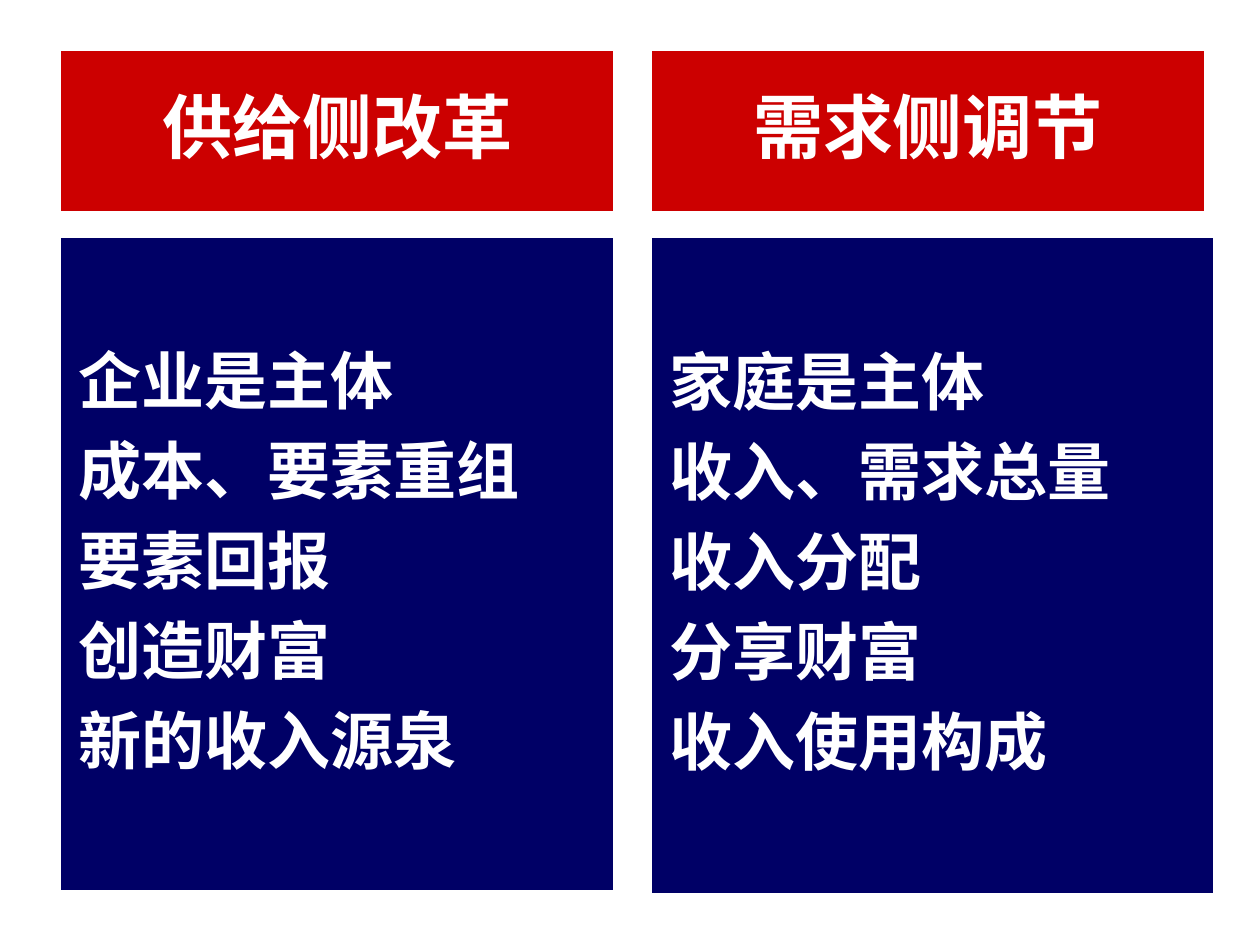
"""Build a two-column slide comparing supply-side reform and demand-side adjustment."""
from lxml import etree
from pptx import Presentation
from pptx.dml.color import RGBColor
from pptx.enum.shapes import MSO_SHAPE
from pptx.enum.text import MSO_ANCHOR, PP_ALIGN
from pptx.oxml.ns import qn
from pptx.util import Pt

RECT = MSO_SHAPE.RECTANGLE
MIDDLE = MSO_ANCHOR.MIDDLE
LEFT, CENTER = PP_ALIGN.LEFT, PP_ALIGN.CENTER
CJK_FONT = "Noto Sans CJK SC"


def rgb(value):
    return RGBColor.from_string(value)


def add_panel(s, box, lines, style):
    sp = s.shapes.add_shape(RECT, *[Pt(v) for v in box])
    sp.shadow.inherit = False
    sp.fill.solid()
    sp.fill.fore_color.rgb = rgb(style["fill"])
    sp.line.color.rgb = rgb("FFFFFF")
    sp.line.width = Pt(2)
    tf = sp.text_frame
    tf.word_wrap = True
    tf.vertical_anchor = MIDDLE
    for side in ("left", "top", "right", "bottom"):
        setattr(tf, f"margin_{side}", Pt(style["inset"]))
    for i, line in enumerate(lines):
        p = tf.add_paragraph() if i else tf.paragraphs[0]
        for name, value in {"alignment": style["align"], "line_spacing": 0.9,
                            "space_after": Pt(0)}.items():
            setattr(p, name, value)
        after = p._p.pPr.find(qn("a:spcAft"))
        after.remove(after[0])
        etree.SubElement(after, qn("a:spcPct"), val="35000")
        r = p.add_run()
        r.text = line
        for name, value in {"name": style["font"], "size": Pt(style["size"]),
                            "bold": True}.items():
            setattr(r.font, name, value)
        r.font.color.rgb = rgb("FFFFFF")
        etree.SubElement(r._r.rPr, qn("a:ea"), typeface=CJK_FONT)


prs = Presentation()
prs.slide_width, prs.slide_height = Pt(720), Pt(540)
s = prs.slides.add_slide(prs.slide_layouts[6])

header = {"fill": "CC0000", "inset": 12, "align": CENTER, "font": "Calibri", "size": 40}
body = {"fill": "000066", "inset": 10.8, "align": LEFT, "font": CJK_FONT, "size": 36}
columns = [
    (34, 317.5, 375, "供给侧改革",
     ["企业是主体", "成本、要素重组", "要素回报", "创造财富", "新的收入源泉"]),
    (371.5, 322.5, 376.5, "需求侧调节",
     ["家庭是主体", "收入、需求总量", "收入分配", "分享财富", "收入使用构成"]),
]
for left, body_width, body_height, heading, points in columns:
    add_panel(s, (left, 28, 317.5, 93.5), [heading], header)
    add_panel(s, (left, 134.75, body_width, body_height), points, body)

prs.save("out.pptx")
